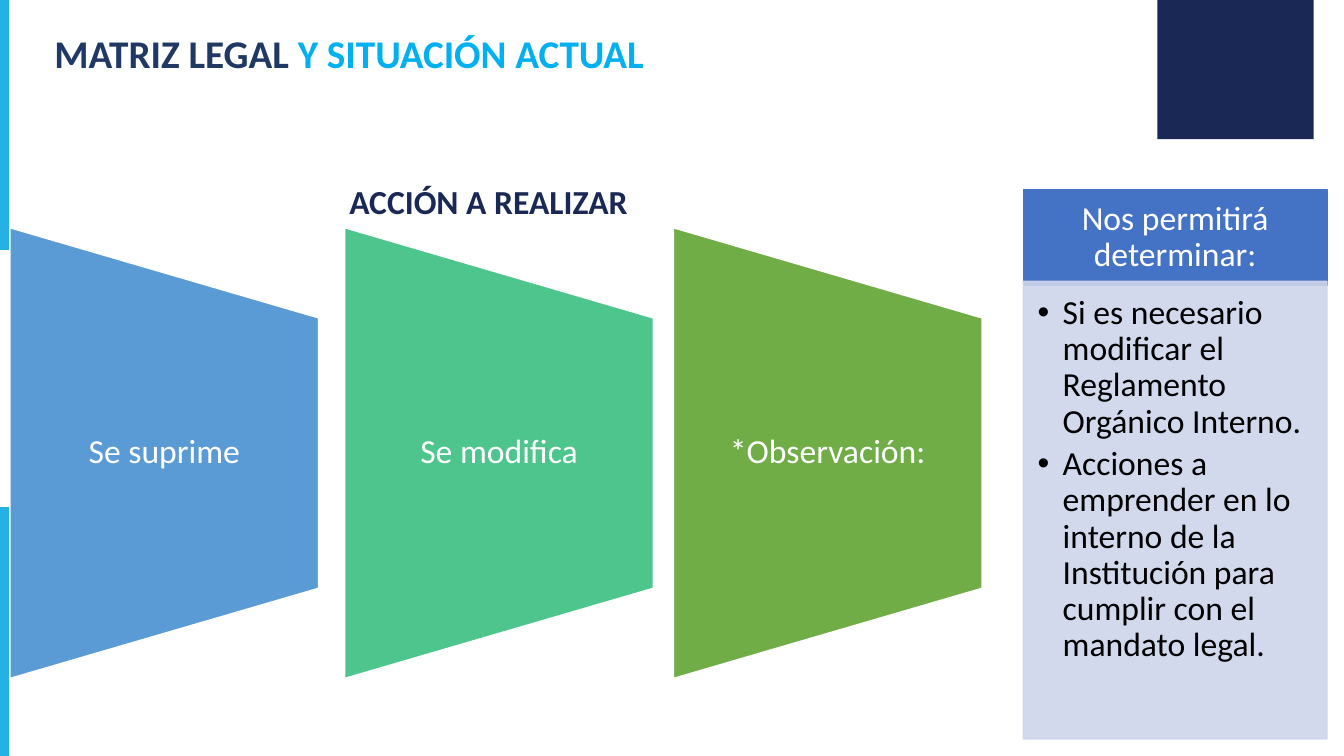
from lxml import etree
from pptx import Presentation
from pptx import util as u
from pptx.dml.color import RGBColor
from pptx.enum import shapes, text
from pptx.oxml.ns import qn

NAVY, CYAN, WHITE = "192854", "23B2E3", "FFFFFF"
RECT = shapes.MSO_SHAPE.RECTANGLE
TRAPEZOID = shapes.MSO_SHAPE.FLOWCHART_MANUAL_OPERATION
MIDDLE, TOP = text.MSO_ANCHOR.MIDDLE, text.MSO_ANCHOR.TOP
CENTER, LEFT = text.PP_ALIGN.CENTER, text.PP_ALIGN.LEFT


def rgb(color):
    return RGBColor.from_string(color)


class SlideBuilder:
    font = "Calibri"

    def __init__(self, deck):
        self.slide = deck.slides.add_slide(deck.slide_layouts[6])

    def shape(self, kind, left, top, width, height, fill, line=None, alpha=None):
        shape = self.slide.shapes.add_shape(
            kind, *map(u.Inches, (left, top, width, height)))
        shape.shadow.inherit = False
        shape.fill.solid()
        shape.fill.fore_color.rgb = rgb(fill)
        if line:
            shape.line.color.rgb = rgb(line)
            shape.line.width = u.Pt(1)
        else:
            shape.line.fill.background()
        if alpha:
            for color in list(shape.element.spPr.iter(qn("a:srgbClr"))):
                etree.SubElement(color, qn("a:alpha"), val=str(alpha * 1000))
        return shape

    def upright(self, kind, left, top, width, height, fill, line=None):
        """Add a shape turned by 270 degrees that covers the given frame."""
        shape = self.shape(kind, left + (width - height) / 2,
                           top + (height - width) / 2, height, width, fill, line)
        shape.rotation = 270

    def label(self, left, top, width, height, spans, size=24, bold=False, align=CENTER):
        box = self.slide.shapes.add_textbox(
            *map(u.Inches, (left, top, width, height)))
        self.set_text(box, [spans], size, bold, align)

    def set_text(self, box, paragraphs, size=24, bold=False, align=CENTER,
                 anchor=MIDDLE, insets=(0.1, 0.05, 0.1, 0.05)):
        """Fill a box with paragraphs, each a list of (words, color) spans."""
        frame = box.text_frame
        frame.word_wrap = True
        frame.vertical_anchor = anchor
        (frame.margin_left, frame.margin_top,
         frame.margin_right, frame.margin_bottom) = map(u.Inches, insets)
        for number, spans in enumerate(paragraphs):
            para = frame.add_paragraph() if number else frame.paragraphs[0]
            para.alignment = align
            para.line_spacing = 0.9
            para.font.name, para.font.size, para.font.bold = self.font, u.Pt(size), bold
            for words, color in spans:
                span = para.add_run()
                span.text = words
                span.font.color.rgb = rgb(color)

    def bullets(self, box, items, color, insets):
        self.set_text(box, [[(item, color)] for item in items],
                      align=LEFT, anchor=TOP, insets=insets)
        for para in box.text_frame.paragraphs:
            para.space_after = u.Pt(4.4)
            properties = para._p.get_or_add_pPr()
            properties.set("marL", str(u.Inches(0.25)))
            properties.set("indent", str(-u.Inches(0.25)))
            etree.SubElement(properties, qn("a:buFont"), typeface="Arial")
            etree.SubElement(properties, qn("a:buChar"), char="•")
            # Default run properties must follow the bullet in the schema order.
            properties.append(properties.find(qn("a:defRPr")))


def main():
    deck = Presentation()
    deck.slide_width, deck.slide_height = u.Inches(13.33), u.Inches(7.5)
    page = SlideBuilder(deck)

    page.label(0.44, 0.19, 8.65, 0.72,
               [("MATRIZ LEGAL", "203864"), (" Y SITUACIÓN ACTUAL", "00B0F0")],
               size=28, bold=True, align=LEFT)
    page.shape(RECT, 11.48, -0.3, 1.55, 1.68, NAVY)
    for top in (5.03, -0.08):
        page.upright(RECT, -0.03, top, 0.12, 2.56, CYAN)

    page.label(2.3, 1.66, 5.09, 0.72, [("ACCIÓN A REALIZAR", NAVY)], bold=True)
    actions = [(0.1, "Se suprime", "5B9BD5"),
               (3.42, "Se modifica", "4DC58D"),
               (6.68, "*Observación:", "70AD47")]
    for left, action, color in actions:
        page.upright(TRAPEZOID, left, 2.26, 3.06, 4.47, color, WHITE)
        page.label(left, 3.15, 3.06, 2.68, [(action, WHITE)])

    header = page.shape(RECT, 10.15, 1.88, 3.01, 0.95, "4472C4", "4472C4")
    page.set_text(header, [[("Nos permitirá determinar:", WHITE)]],
                  insets=(0.19, 0.11, 0.19, 0.11))
    body = page.shape(RECT, 10.15, 2.79, 3.01, 4.54, "CFD5EA", "CFD5EA", alpha=90)
    page.bullets(body, [
        "Si es necesario modificar el Reglamento Orgánico Interno.",
        "Acciones a emprender en lo interno de la Institución para cumplir "
        "con el mandato legal.",
    ], "000000", insets=(0.14, 0.14, 0.19, 0.21))

    deck.save("out.pptx")


if __name__ == "__main__":
    main()
